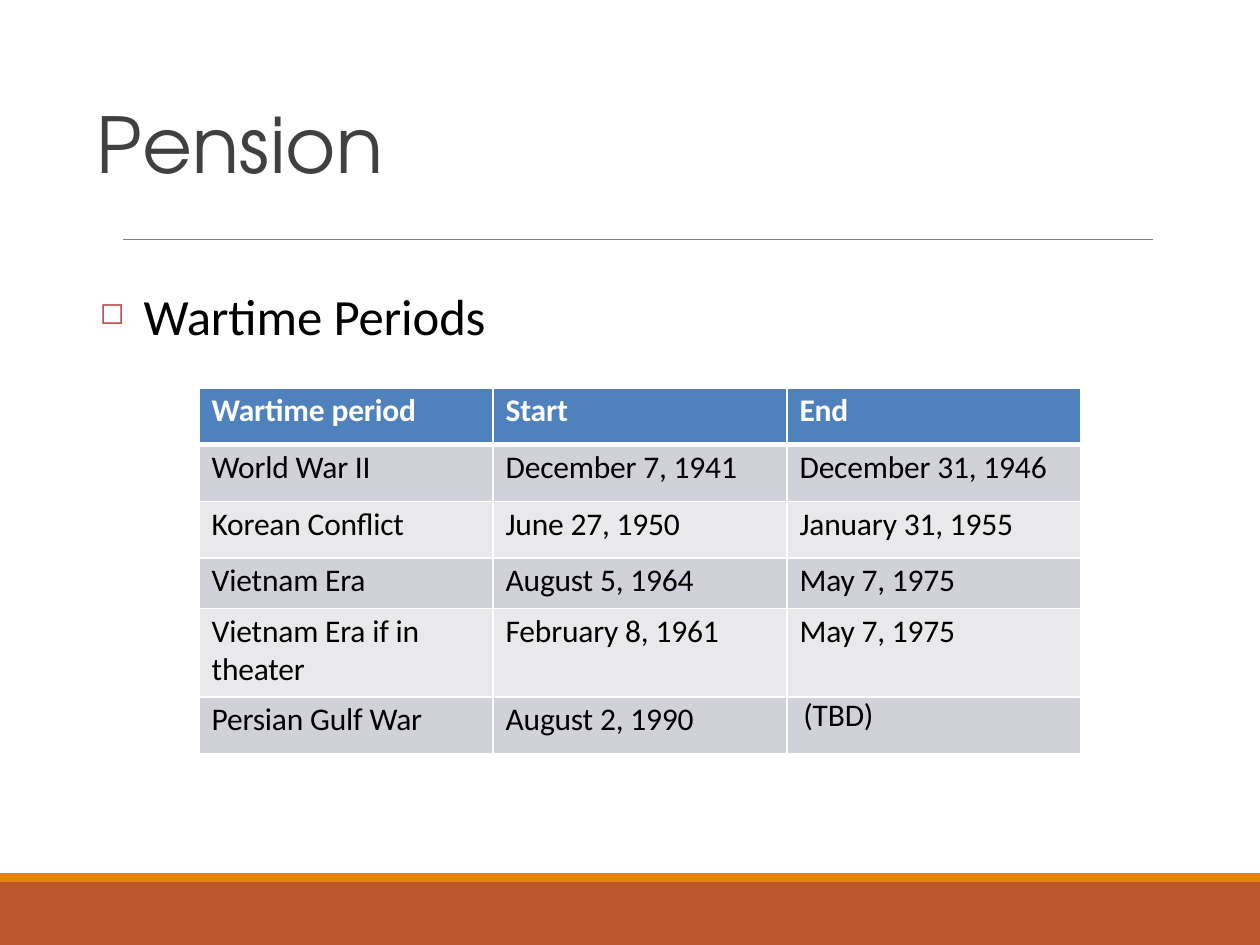
from lxml.etree import SubElement
from pptx import Presentation
from pptx.dml.color import RGBColor
from pptx.enum.shapes import MSO_CONNECTOR, MSO_SHAPE
from pptx.enum.text import MSO_ANCHOR, MSO_AUTO_SIZE, PP_ALIGN
from pptx.oxml.ns import qn
from pptx.util import Inches, Pt

BODY_FONT = "Calibri"
TITLE_RUNS = [("P", -80), ("ens", 10), ("i", -50), ("o", 10), ("n", -50)]
HEADER_FILL, BAND_FILLS = "4F81BC", ("D1D1DA", "E9E9EC")
ROW_HEIGHTS = (0.45, 0.45, 0.45, 0.4, 0.7, 0.45)
PERIODS = [
    ("Wartime period", "Start", "End"),
    ("World War II", "December 7, 1941", "December 31, 1946"),
    ("Korean Conflict", "June 27, 1950", "January 31, 1955"),
    ("Vietnam Era", "August 5, 1964", "May 7, 1975"),
    ("Vietnam Era if in  theater", "February 8, 1961", "May 7, 1975"),
    ("Persian Gulf War", "August 2, 1990", "(TBD)"),
]


def color(value):
    """Turn a hex string into a colour."""
    return RGBColor.from_string(value)


def set_attrs(obj, values):
    """Set every attribute named in a dict."""
    for name, value in values.items():
        setattr(obj, name, value)


def add_run(p, text, size, fill, font=BODY_FONT, bold=False, spacing=-10):
    """Add a formatted run with letter spacing in hundredths of a point."""
    r = p.add_run()
    r.text = text
    set_attrs(r.font, {"size": Pt(size), "name": font, "bold": bold})
    r.font.color.rgb = color(fill)
    r._r.get_or_add_rPr().set("spc", str(spacing))


def format_frame(tf, anchor=MSO_ANCHOR.TOP):
    """Give a text frame its margins, wrapping and anchor."""
    set_attrs(tf, {"margin_left": 0, "margin_right": 0, "margin_bottom": 0,
                   "margin_top": Inches(0.01), "word_wrap": True,
                   "auto_size": MSO_AUTO_SIZE.SHAPE_TO_FIT_TEXT,
                   "vertical_anchor": anchor})


def add_band(s, top, height, fill):
    """Add a full-width footer band."""
    sp = s.shapes.add_shape(MSO_SHAPE.RECTANGLE, 0, Inches(top), Inches(10), Inches(height))
    sp.shadow.inherit = False
    sp.fill.solid()
    sp.fill.fore_color.rgb = color(fill)
    sp.line.fill.background()


def add_rule(s, left, right, y):
    """Add the thin grey rule below the title."""
    line = s.shapes.add_connector(MSO_CONNECTOR.STRAIGHT, Inches(left), Inches(y),
                                  Inches(right), Inches(y))
    line.line.width = Pt(0.5)
    line.line.color.rgb = color("808080")
    SubElement(line._element.spPr, qn("a:effectLst"))


def format_title(title):
    """Place the title and write its tracked letters."""
    set_attrs(title, {"left": Inches(0.76), "top": Inches(0.75),
                      "width": Inches(4.74), "height": Inches(0.75)})
    format_frame(title.text_frame, MSO_ANCHOR.BOTTOM)
    p = title.text_frame.paragraphs[0]
    set_attrs(p, {"alignment": PP_ALIGN.LEFT, "space_before": Pt(1)})
    p._p.get_or_add_pPr().set("marL", str(Inches(0.01)))
    for text, spacing in TITLE_RUNS:
        add_run(p, text, 44, "404040", "TeX Gyre Adventor", spacing=spacing)


def add_bullet(s, text):
    """Add the bulleted subheading."""
    sp = s.shapes.add_textbox(Inches(0.78), Inches(2.25), Inches(3.11), Inches(0.51))
    format_frame(sp.text_frame)
    p = sp.text_frame.paragraphs[0]
    p.space_before = Pt(1.1)
    pPr = p._p.get_or_add_pPr()
    pPr.set("marL", str(Inches(0.36)))
    pPr.set("indent", str(Inches(-0.35)))
    SubElement(SubElement(pPr, qn("a:buClr")), qn("a:srgbClr"), val="C0504D")
    SubElement(pPr, qn("a:buSzPct"), val="60000")
    SubElement(pPr, qn("a:buChar"), char="◻")
    add_run(p, text, 29, "000000")


def set_borders(cell, widths):
    """Draw white cell borders of the given widths in points."""
    tcPr = cell._tc.get_or_add_tcPr()
    for side, width in widths.items():
        ln = SubElement(tcPr, qn(f"a:ln{side}"), w=str(Pt(width)))
        SubElement(SubElement(ln, qn("a:solidFill")), qn("a:srgbClr"), val="FFFFFF")


def fill_cell(cell, text, row):
    """Format one table cell by its row."""
    header, open_end = row == 0, text == "(TBD)"
    set_borders(cell, {"L": 1, "R": 1, "T": 3 if row == 1 else 1, "B": 3 if header else 1})
    cell.fill.solid()
    cell.fill.fore_color.rgb = color(HEADER_FILL if header else BAND_FILLS[(row - 1) % 2])
    set_attrs(cell, {"margin_left": Inches(0.13 if open_end else 0.1), "margin_right": 0,
                     "margin_top": Inches(0 if open_end else 0.03), "margin_bottom": 0})
    p = cell.text_frame.paragraphs[0]
    p.space_before = Pt(0 if open_end else 2.4)
    add_run(p, text, 18, "FFFFFF" if header else "000000", bold=header)


def add_periods_table(s):
    """Add the table of wartime periods."""
    table = s.shapes.add_table(len(PERIODS), len(PERIODS[0]), Inches(1.58), Inches(3.08),
                               Inches(7), Inches(sum(ROW_HEIGHTS))).table
    for row, (height, texts) in enumerate(zip(ROW_HEIGHTS, PERIODS)):
        table.rows[row].height = Inches(height)
        for col, text in enumerate(texts):
            fill_cell(table.cell(row, col), text, row)


def main():
    """Build and save the slide."""
    prs = Presentation()
    set_attrs(prs, {"slide_width": Inches(10), "slide_height": Inches(7.5)})
    s = prs.slides.add_slide(prs.slide_layouts[5])
    add_band(s, 7, 0.5, "BD582C")
    add_band(s, 6.93, 0.07, "E48312")
    add_rule(s, 0.98, 9.15, 1.9)
    format_title(s.shapes.title)
    add_bullet(s, "Wartime Periods")
    add_periods_table(s)
    prs.save("out.pptx")


if __name__ == "__main__":
    main()
